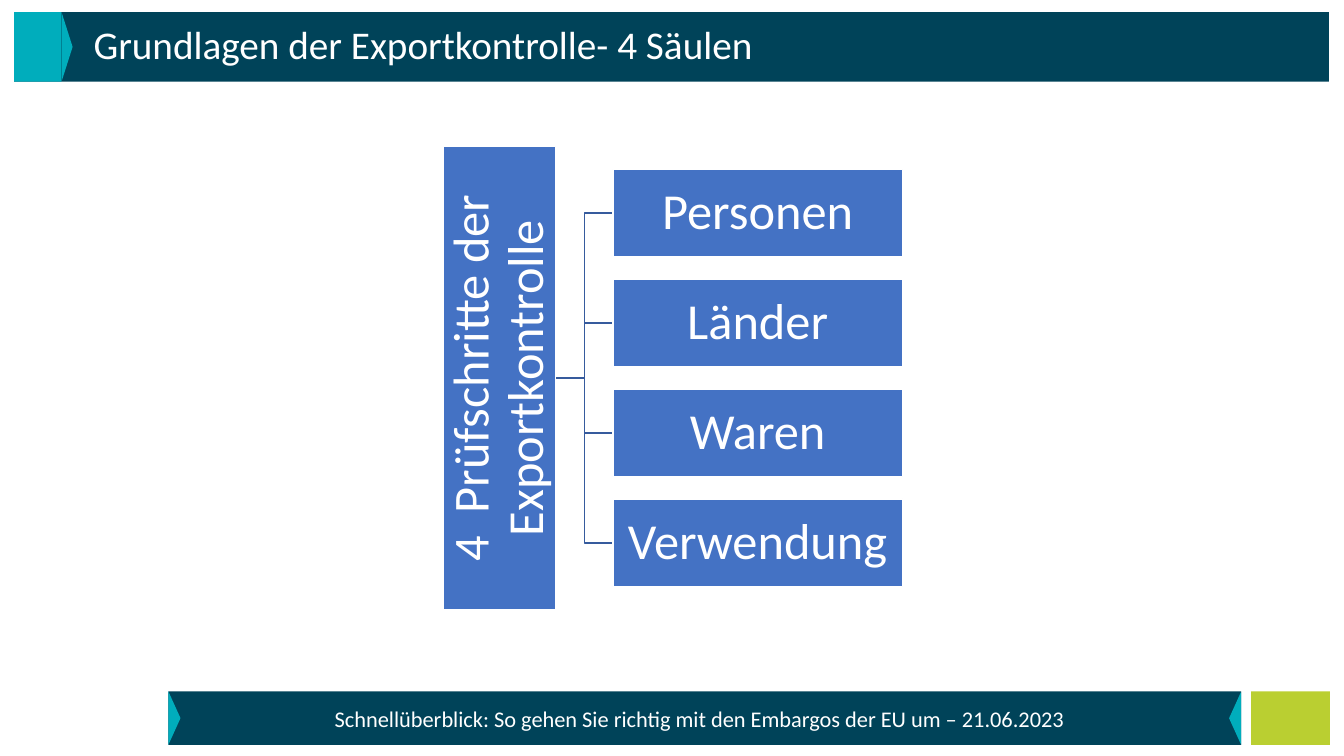
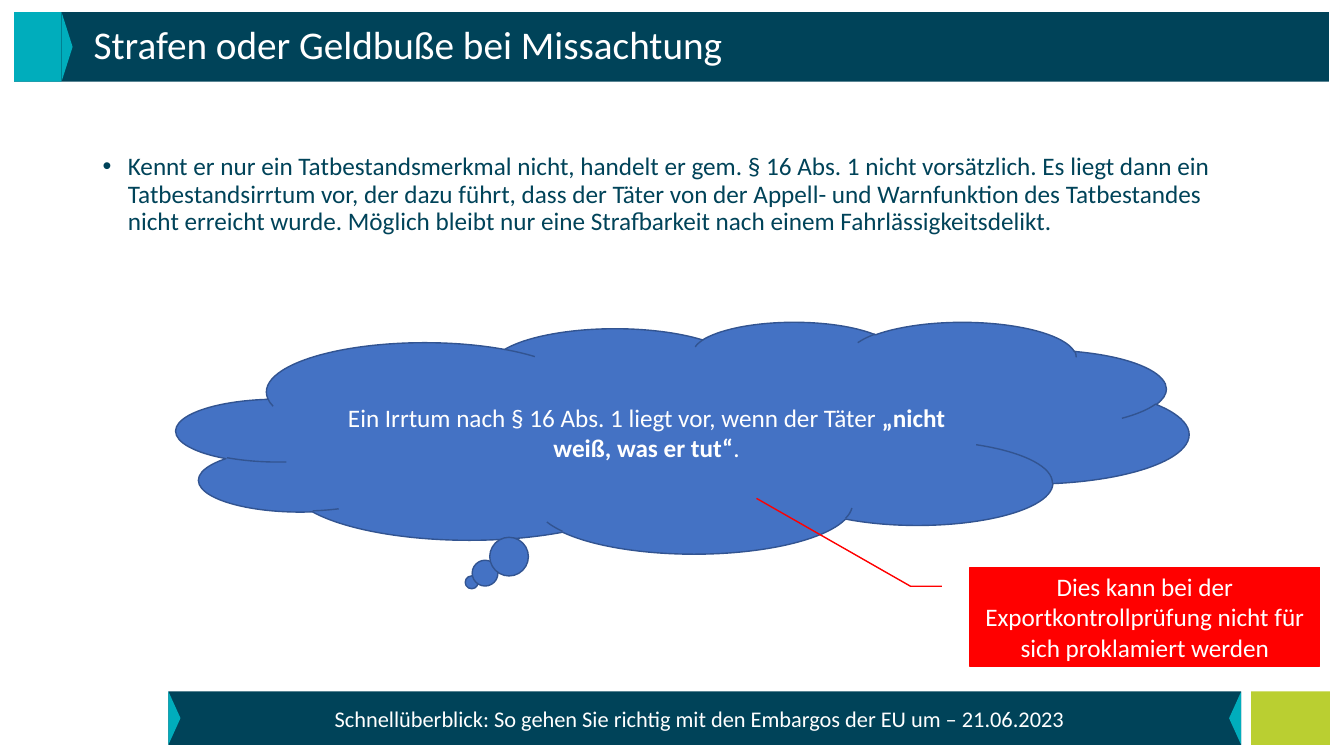
import lxml.etree
import pptx
import pptx.dml.color
import pptx.enum.shapes
import pptx.enum.text
import pptx.oxml.ns
import pptx.util

RGB = pptx.dml.color.RGBColor
SHAPE = pptx.enum.shapes.MSO_SHAPE
ALIGN = pptx.enum.text.PP_ALIGN
ANCHOR = pptx.enum.text.MSO_ANCHOR
qn = pptx.oxml.ns.qn

PX = 9144  # EMU; 100 px to the inch
SLIDE_WIDTH, SLIDE_HEIGHT = 1333, 750

PETROL = RGB(0x00, 0x43, 0x59)
TURQUOISE = RGB(0x00, 0xAD, 0xBC)
LIME = RGB(0xBA, 0xCF, 0x31)
BLUE = RGB(0x44, 0x72, 0xC4)
CONNECTOR_BLUE = RGB(0x36, 0x5B, 0x9D)
CLOUD_OUTLINE = RGB(0x32, 0x54, 0x91)
RED = RGB(0xFF, 0x00, 0x00)
WHITE = RGB(0xFF, 0xFF, 0xFF)

FONT = "Calibri"
FOOTER = "Schnellüberblick: So gehen Sie richtig mit den Embargos der EU um – 21.06.2023"


def px(*lengths):
    return [pptx.util.Emu(round(length * PX)) for length in lengths]


def add_shape(slide, kind, box, fill, line=None, rotation=0):
    """Place a shape so that box is what it covers after a quarter turn."""
    left, top, width, height = box
    if rotation in (90, 270):
        left, top = left + (width - height) / 2, top + (height - width) / 2
        width, height = height, width
    shape = slide.shapes.add_shape(kind, *px(left, top, width, height))
    shape.rotation = rotation
    shape.shadow.inherit = False
    shape.fill.solid()
    shape.fill.fore_color.rgb = fill
    if line is None:
        shape.line.fill.background()
    else:
        shape.line.color.rgb = line
        shape.line.width = pptx.util.Pt(1)
    return shape


def write(shape, text, size, color=WHITE, align=ALIGN.CENTER, anchor=ANCHOR.MIDDLE,
          spacing=1.0, margin=None):
    frame = shape.text_frame
    frame.text = text
    frame.word_wrap = True
    frame.vertical_anchor = anchor
    if margin is not None:
        frame.margin_left, frame.margin_top, frame.margin_right, frame.margin_bottom = px(*[margin] * 4)
    paragraph = frame.paragraphs[0]
    paragraph.alignment = align
    paragraph.line_spacing = spacing
    for run in paragraph.runs:
        style_run(run, size, color)
    return paragraph


def style_run(run, size, color, bold=False):
    run.font.name = FONT
    run.font.size = pptx.util.Pt(size)
    run.font.color.rgb = color
    run.font.bold = bold


def add_text_box(slide, box, text, size, **style):
    text_box = slide.shapes.add_textbox(*px(*box))
    return write(text_box, text, size, **style)


def add_footer(slide, box):
    left, top, width, height = box
    tip, square, gap = 12, 78, 10
    band = width - square - gap
    add_shape(slide, SHAPE.RECTANGLE, (left + width - square, top, square, height), LIME)
    bar = add_shape(slide, SHAPE.RECTANGLE, (left, top, band, height), PETROL)
    write(bar, FOOTER, 16)
    bar.text_frame.margin_right = px(20)[0]
    for tip_left, rotation in ((left, 90), (left + band - tip, 270)):
        add_shape(slide, SHAPE.ISOSCELES_TRIANGLE, (tip_left, top, tip, height),
                  TURQUOISE, rotation=rotation)


def add_title_band(slide, box, title):
    left, top, width, height = box
    tab, tip, indent = 47, 11, 69
    add_shape(slide, SHAPE.RECTANGLE, box, PETROL)
    add_shape(slide, SHAPE.RECTANGLE, (left, top, tab, height), TURQUOISE)
    add_shape(slide, SHAPE.ISOSCELES_TRIANGLE, (left + tab, top, tip, height),
              TURQUOISE, rotation=90)
    add_text_box(slide, (left + indent, top, 1150, height), title, 28,
                 align=ALIGN.LEFT, spacing=0.9)


def add_framed_slide(presentation, title):
    slide = presentation.slides.add_slide(presentation.slide_layouts[6])
    add_footer(slide, (167, 686, 1152, 53))
    add_title_band(slide, (14, 12, 1304, 69), title)
    return slide


def add_elbow(slide, start, end):
    connector = slide.shapes.add_connector(
        pptx.enum.shapes.MSO_CONNECTOR.ELBOW, *px(*start, *end))
    connector.line.color.rgb = CONNECTOR_BLUE
    connector.line.width = pptx.util.Pt(1)
    lxml.etree.SubElement(connector._element.spPr, qn("a:effectLst"))


def add_hierarchy(slide, box, root_text, steps):
    """Draw a vertical root on the left, joined to a centred column of steps."""
    left, top, width, height = box
    root_width, branch, step_height, gap = 111, 57, 87, 22
    middle = top + height / 2
    step_left = left + root_width + branch
    first_top = middle - (len(steps) * (step_height + gap) - gap) / 2
    step_tops = [first_top + index * (step_height + gap) for index in range(len(steps))]

    for step_top in step_tops:
        add_elbow(slide, (left + root_width, middle), (step_left, step_top + step_height / 2))
    root = add_shape(slide, SHAPE.RECTANGLE, (left, top, root_width, height), BLUE, WHITE, 270)
    write(root, root_text, 36, spacing=0.9, margin=3)
    for step_top, step in zip(step_tops, steps):
        step_box = (step_left, step_top, width - root_width - branch, step_height)
        shape = add_shape(slide, SHAPE.RECTANGLE, step_box, BLUE, WHITE)
        write(shape, step, 36, spacing=0.9, margin=3)


def add_bullet(slide, box, text):
    paragraph = add_text_box(slide, box, text, 18, color=PETROL, align=ALIGN.LEFT,
                             anchor=ANCHOR.TOP, spacing=0.9)
    properties = paragraph._p.get_or_add_pPr()
    indent = px(25)[0]
    properties.set("marL", str(indent))
    properties.set("indent", str(-indent))
    bullet_font = lxml.etree.SubElement(properties, qn("a:buFont"))
    bullet_font.set("typeface", "Arial")
    lxml.etree.SubElement(properties, qn("a:buChar")).set("char", "•")


def add_thought_cloud(slide, box, parts):
    """Draw a cloud whose parts are pairs of text and boldness."""
    cloud = add_shape(slide, SHAPE.CLOUD_CALLOUT, box, BLUE, CLOUD_OUTLINE)
    paragraph = write(cloud, "", 18)
    for text, bold in parts:
        run = paragraph.add_run()
        run.text = text
        style_run(run, 18, WHITE, bold)


def add_warning(slide, box, text):
    warning = add_shape(slide, SHAPE.LINE_CALLOUT_2, box, RED, RED)
    for index, value in enumerate((0.19, -0.08, 0.19, -0.17, -0.7, -0.61)):
        warning.adjustments[index] = value
    write(warning, text, 18)


def build_pillars_slide(presentation):
    slide = add_framed_slide(presentation, "Grundlagen der Exportkontrolle- 4 Säulen")
    add_hierarchy(slide, (440, 145, 455, 460), "4  Prüfschritte der Exportkontrolle",
                  ("Personen", "Länder", "Waren", "Verwendung"))


def build_penalties_slide(presentation):
    slide = add_framed_slide(presentation, "Strafen oder Geldbuße bei Missachtung")
    add_bullet(slide, (92, 148, 1150, 120),
               "Kennt er nur ein Tatbestandsmerkmal nicht, handelt er gem. § 16 Abs. 1 nicht "
               "vorsätzlich. Es liegt dann ein Tatbestandsirrtum vor, der dazu führt, dass der "
               "Täter von der Appell- und Warnfunktion des Tatbestandes nicht erreicht wurde. "
               "Möglich bleibt nur eine Strafbarkeit nach einem Fahrlässigkeitsdelikt.")
    add_thought_cloud(slide, (175, 319, 1004, 230), (
        ("Ein Irrtum nach § 16 Abs. 1 liegt vor, wenn der Täter ", False),
        ("„nicht weiß, was er tut“", True),
        (".", False),
    ))
    add_warning(slide, (962, 563, 347, 98),
                "Dies kann bei der Exportkontrollprüfung nicht für sich proklamiert werden")


def main():
    presentation = pptx.Presentation()
    presentation.slide_width, presentation.slide_height = px(SLIDE_WIDTH, SLIDE_HEIGHT)
    build_pillars_slide(presentation)
    build_penalties_slide(presentation)
    presentation.save("out.pptx")


if __name__ == "__main__":
    main()
